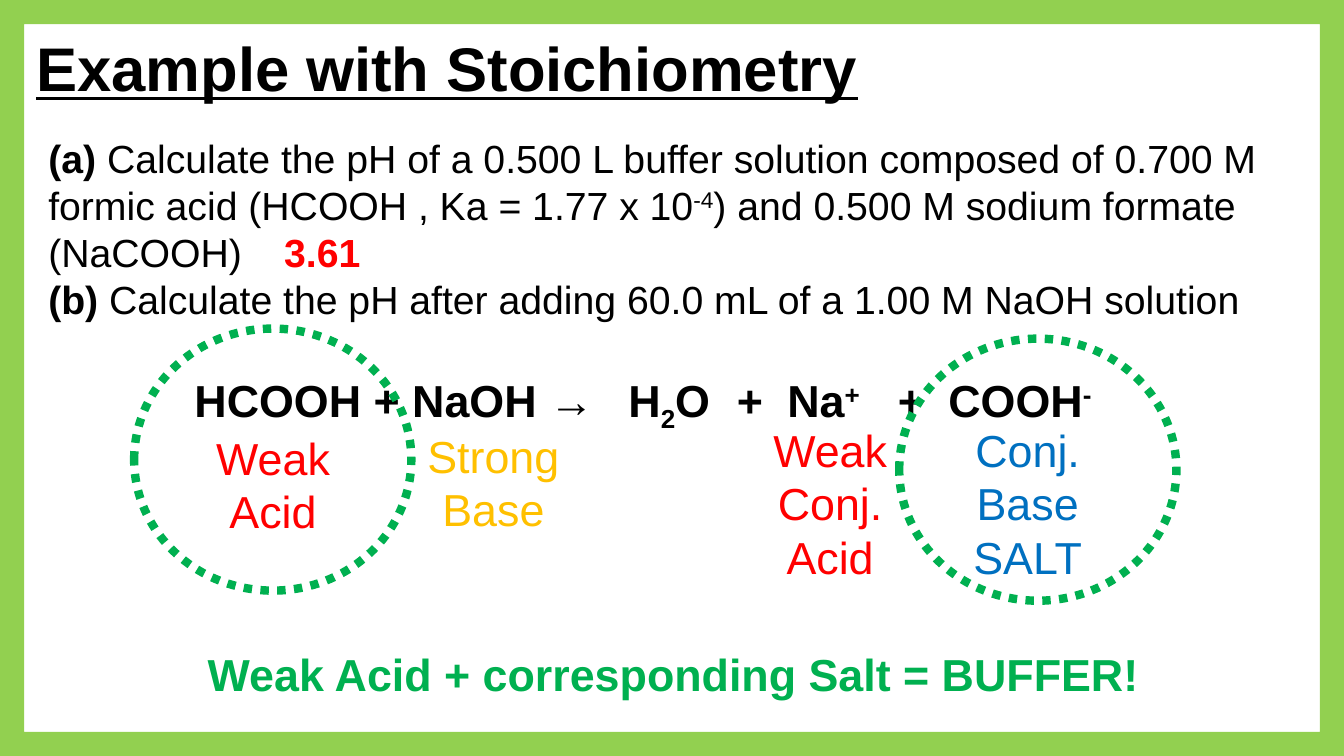
from lxml import etree
from pptx import Presentation
from pptx.dml.color import RGBColor
from pptx.enum.dml import MSO_LINE
from pptx.enum.shapes import MSO_SHAPE
from pptx.enum.text import MSO_ANCHOR, MSO_AUTO_SIZE, PP_ALIGN
from pptx.oxml.ns import qn
from pptx.util import Pt

LEFT, CENTER = PP_ALIGN.LEFT, PP_ALIGN.CENTER
MIDDLE, TOP = MSO_ANCHOR.MIDDLE, MSO_ANCHOR.TOP
NO_FIT = MSO_AUTO_SIZE.NONE
FRAME, ELLIPSE = MSO_SHAPE.FRAME, MSO_SHAPE.OVAL
DOTTED = MSO_LINE.ROUND_DOT

FONT = "Arial"
COLORS = {
    "text": "000000",
    "border": "92D050",
    "acid": "FF0000",
    "strong": "FFC000",
    "salt": "0070C0",
    "buffer": "00B050",
}
SLIDE_W, SLIDE_H = 960, 540
SUPER, SUB = 30, -25


def rgb(name):
    return RGBColor.from_string(COLORS[name])


def add_run(paragraph, text, size, color="text", bold=False, underline=False, baseline=0):
    run = paragraph.add_run()
    run.text = text
    font = run.font
    font.name, font.size, font.bold = FONT, Pt(size), bold
    font.underline = underline
    font.color.rgb = rgb(color)
    if baseline:
        run._r.get_or_add_rPr().set("baseline", str(baseline * 1000))


def set_tabs(paragraph, stops):
    tab_list = etree.SubElement(paragraph._p.get_or_add_pPr(), qn("a:tabLst"))
    for stop in stops:
        etree.SubElement(tab_list, qn("a:tab"), pos=str(Pt(stop)), algn="l")


def add_text(slide, box, paragraphs, size, align=LEFT, tabs=()):
    """Each paragraph is a list of (text, run options)."""
    frame = slide.shapes.add_textbox(*map(Pt, box)).text_frame
    frame.word_wrap = True
    frame.vertical_anchor = TOP
    for index, runs in enumerate(paragraphs):
        paragraph = frame.add_paragraph() if index else frame.paragraphs[0]
        paragraph.alignment = align
        if tabs:
            set_tabs(paragraph, tabs)
        for text, options in runs:
            add_run(paragraph, text, size, **options)


def add_title(slide, box):
    title = slide.shapes.title
    title.left, title.top, title.width, title.height = map(Pt, box)
    frame = title.text_frame
    frame.auto_size = NO_FIT
    frame.vertical_anchor = MIDDLE
    heading = frame.paragraphs[0]
    heading.alignment = LEFT
    add_run(heading, "Example with Stoichiometry", 44, bold=True, underline=True)


def add_border(slide, box):
    border = slide.shapes.add_shape(FRAME, *map(Pt, box))
    border.adjustments[0] = 0.032
    border.shadow.inherit = False
    border.fill.solid()
    border.fill.fore_color.rgb = rgb("border")
    border.line.fill.background()


def add_question(slide, box):
    part_a = [
        ("(a) ", {"bold": True}),
        ("Calculate the pH of a 0.500 L buffer solution composed of 0.700 M "
         "formic acid (HCOOH , Ka = 1.77 x 10", {}),
        ("-4", {"baseline": SUPER}),
        (") and 0.500 M sodium formate (NaCOOH)\t", {}),
        ("3.61", {"color": "acid", "bold": True}),
    ]
    part_b = [
        ("(b) ", {"bold": True}),
        ("Calculate the pH after adding 60.0 mL of a 1.00 M NaOH solution", {}),
    ]
    add_text(slide, box, [part_a, part_b], 28, tabs=[168.5])


def add_circle(slide, box):
    circle = slide.shapes.add_shape(ELLIPSE, *map(Pt, box))
    circle.shadow.inherit = False
    circle.fill.background()
    circle.line.color.rgb = rgb("buffer")
    circle.line.width = Pt(6)
    circle.line.dash_style = DOTTED


def add_reaction(slide, box):
    """Equation, a role label under each species, and circles on the buffer pair."""
    left, top, width, _ = box
    equation = [
        ("HCOOH + NaOH →\tH", 0), ("2", SUB), ("O\t+\tNa", 0),
        ("+", SUPER), ("\t+\tCOOH", 0), ("-", SUPER),
    ]
    runs = [(text, {"bold": True, "baseline": shift}) for text, shift in equation]
    add_text(slide, (left, top, width, 46), [runs], 32,
             tabs=[310, 387.5, 423.5, 502.5, 538.5])

    roles = [
        (12.2, 41, 102.2, 85, "acid", ["Weak", "Acid"]),
        (162, 39.6, 117.4, 85, "strong", ["Strong", "Base"]),
        (402.5, 35.3, 117.4, 124, "acid", ["Weak Conj.", "Acid"]),
        (543.6, 35.3, 117.4, 124, "salt", ["Conj. Base SALT"]),
    ]
    for dx, dy, role_w, role_h, color, lines in roles:
        add_text(slide, (left + dx, top + dy, role_w, role_h),
                 [[(line, {"color": color})] for line in lines], 32, CENTER)

    for dx, dy in [(-36, -28.1), (510.5, -20.9)]:
        add_circle(slide, (left + dx, top + dy, 198, 187.2))


def add_conclusion(slide, box):
    conclusion = ("Weak Acid + corresponding Salt = BUFFER!",
                  {"color": "buffer", "bold": True})
    add_text(slide, box, [[conclusion]], 32, CENTER)


def main():
    deck = Presentation()
    deck.slide_width, deck.slide_height = Pt(SLIDE_W), Pt(SLIDE_H)
    slide = deck.slides.add_slide(deck.slide_layouts[5])
    add_title(slide, (18.7, 18, 756, 60))
    add_border(slide, (0, 0, SLIDE_W, SLIDE_H))
    add_question(slide, (27.4, 92.2, 908.6, 143.3))
    add_reaction(slide, (131.8, 262.8, 696.2, 160))
    add_conclusion(slide, (133.2, 458.6, 696.2, 46))
    deck.save("out.pptx")


if __name__ == "__main__":
    main()
